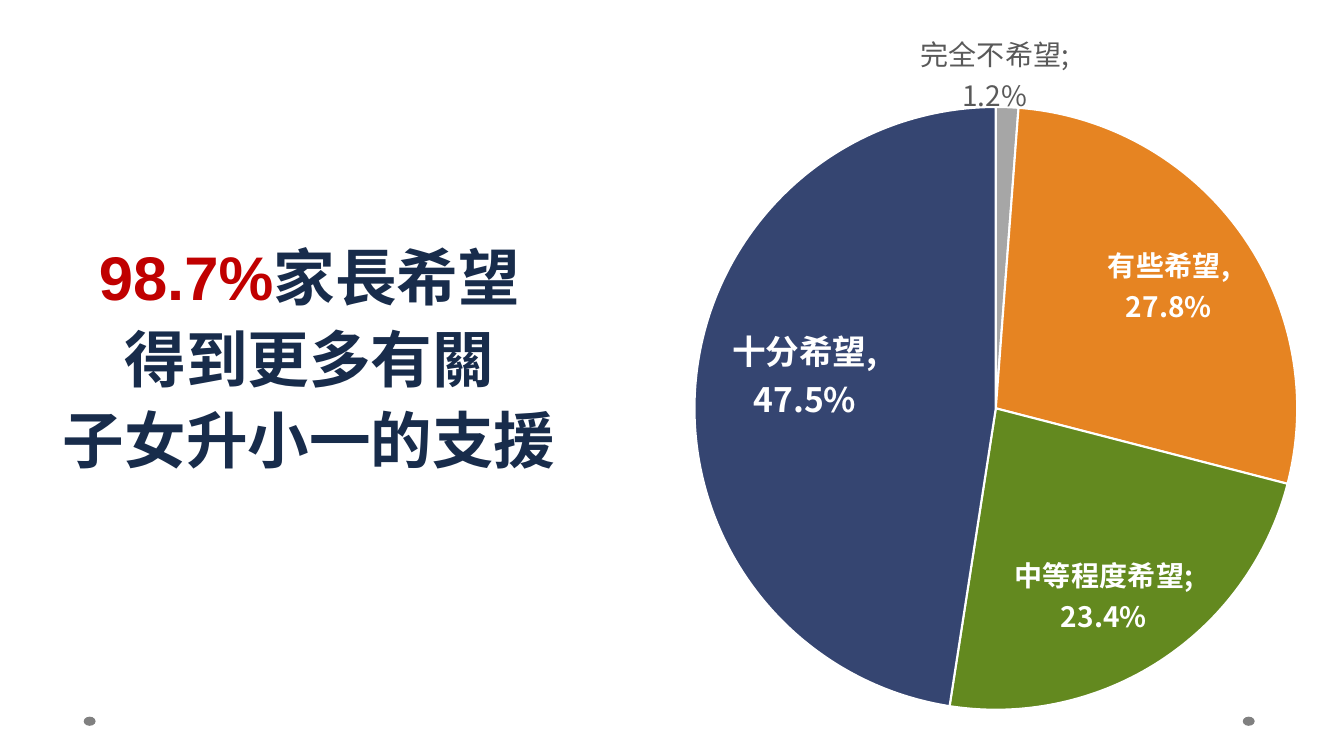
from lxml import etree
from pptx import Presentation
from pptx import util as u
from pptx.chart.data import CategoryChartData
from pptx.dml.color import RGBColor
from pptx.enum import chart as charts, shapes, text
from pptx.oxml import ns

NAVY = RGBColor(0x18, 0x2C, 0x4B)
RED = RGBColor(0xC0, 0x00, 0x00)
WHITE = RGBColor(0xFF, 0xFF, 0xFF)
BLACK = RGBColor(0x00, 0x00, 0x00)
DOT_GRAY = RGBColor(0x80, 0x80, 0x80)
LABEL_GRAY = RGBColor(0x59, 0x59, 0x59)
SLICE_GRAY = RGBColor(0xA6, 0xA6, 0xA6)
ORANGE = RGBColor(0xE6, 0x84, 0x22)
GREEN = RGBColor(0x63, 0x89, 0x1F)
BLUE = RGBColor(0x35, 0x45, 0x71)

INSIDE = charts.XL_LABEL_POSITION.INSIDE_END
OUTSIDE = charts.XL_LABEL_POSITION.OUTSIDE_END
ANSWERS = [
    ("完全不希望", 0.012, SLICE_GRAY, LABEL_GRAY, 20, ";\n", OUTSIDE, (-0.011, 0.017)),
    ("有些希望", 0.278, ORANGE, WHITE, 20, ",\n", INSIDE, (-0.005, 0.01)),
    ("中等程度希望", 0.234, GREEN, WHITE, 20, ";\n", INSIDE, (0.031, -0.025)),
    ("十分希望", 0.475, BLUE, WHITE, 24, ",\n", INSIDE, (0.027, -0.015)),
]


def add_layout(parent, index, **values):
    layout = etree.Element(ns.qn("c:layout"))
    manual = etree.SubElement(layout, ns.qn("c:manualLayout"))
    for name, value in values.items():
        etree.SubElement(manual, ns.qn("c:" + name), val=str(value))
    parent.insert(index, layout)


class SurveySlide:
    title_font = "Arial"
    chart_font = "TeX Gyre Pagella"
    label_font = "Noto Sans CJK TC"

    def __init__(self, deck):
        self.page = deck.slides.add_slide(deck.slide_layouts[6])

    def dot(self, left):
        dot = self.page.shapes.add_shape(
            shapes.MSO_SHAPE.OVAL, u.Cm(left), u.Cm(18.06), u.Cm(0.3), u.Cm(0.23))
        dot.shadow.inherit = False
        dot.fill.solid()
        dot.fill.fore_color.rgb = DOT_GRAY
        dot.line.fill.background()

    def headline(self, figure, lines):
        box = self.page.shapes.add_textbox(u.Cm(1.17), u.Cm(9.93), u.Cm(13.26), u.Cm(2.18))
        frame = box.text_frame
        frame.word_wrap = True
        frame.vertical_anchor = text.MSO_ANCHOR.BOTTOM
        para = frame.paragraphs[0]
        para.text = figure
        para.alignment = text.PP_ALIGN.CENTER
        para.line_spacing = u.Pt(58)
        for number, line in enumerate(lines):
            if number:
                para.add_line_break()
            para.add_run().text = line
        for number, span in enumerate(para.runs):
            span.font.name = self.title_font
            span.font.size = u.Pt(44)
            span.font.bold = True
            span.font.color.rgb = NAVY if number else RED

    def pie(self, answers):
        data = CategoryChartData(number_format="0.0%")
        data.categories = [answer[0] for answer in answers]
        data.add_series("Series 1", [answer[1] for answer in answers])
        chart = self.page.shapes.add_chart(
            charts.XL_CHART_TYPE.PIE, u.Cm(10.11), u.Cm(0.15), u.Cm(28.88), u.Cm(19.58), data).chart
        chart.has_legend = False
        chart.has_title = False
        chart.font.name = self.chart_font
        chart.font.size = u.Pt(10)
        chart.font.color.rgb = BLACK
        plot = chart.plots[0]
        plot.vary_by_categories = True
        area = plot._element.getparent()
        for old in area.findall(ns.qn("c:layout")):
            area.remove(old)
        add_layout(area, 0, layoutTarget="inner", xMode="edge", yMode="edge",
                   x=0.256, y=0.13, w=0.526, h=0.776)
        for index, answer in enumerate(answers):
            self.slice(plot.series[0], index, *answer[2:])

    def slice(self, series, index, fill, color, size, separator, position, shift):
        point = series.points[index]
        point.format.fill.solid()
        point.format.fill.fore_color.rgb = fill
        point.format.line.color.rgb = WHITE
        point.format.line.width = u.Pt(1.5)
        label = point.data_label
        label.font.name = self.label_font
        label.font.size = u.Pt(size)
        label.font.bold = color == WHITE
        label.font.color.rgb = color
        label.position = position
        element = series._element.xpath(f"c:dLbls/c:dLbl[c:idx/@val='{index}']")[0]
        element.find(ns.qn("c:showCatName")).set("val", "1")
        etree.SubElement(element, ns.qn("c:separator")).text = separator
        add_layout(element, 1, x=shift[0], y=shift[1])


def main():
    deck = Presentation()
    deck.slide_width, deck.slide_height = u.Cm(33.87), u.Cm(19.05)
    survey = SurveySlide(deck)
    for left in (31.32, 2.11):
        survey.dot(left)
    survey.headline("98.7%", ["家長希望", "得到更多有關", "子女升小一的支援"])
    survey.pie(ANSWERS)
    deck.save("out.pptx")


if __name__ == "__main__":
    main()
